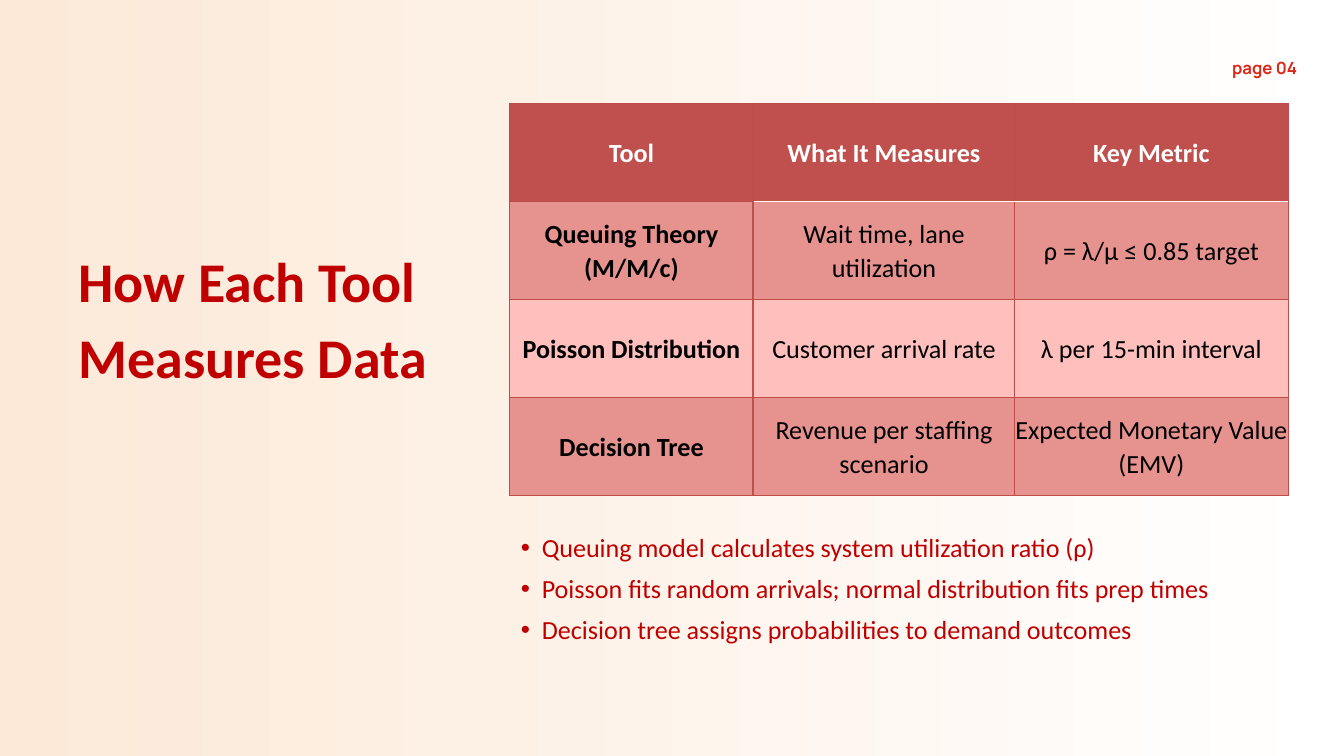
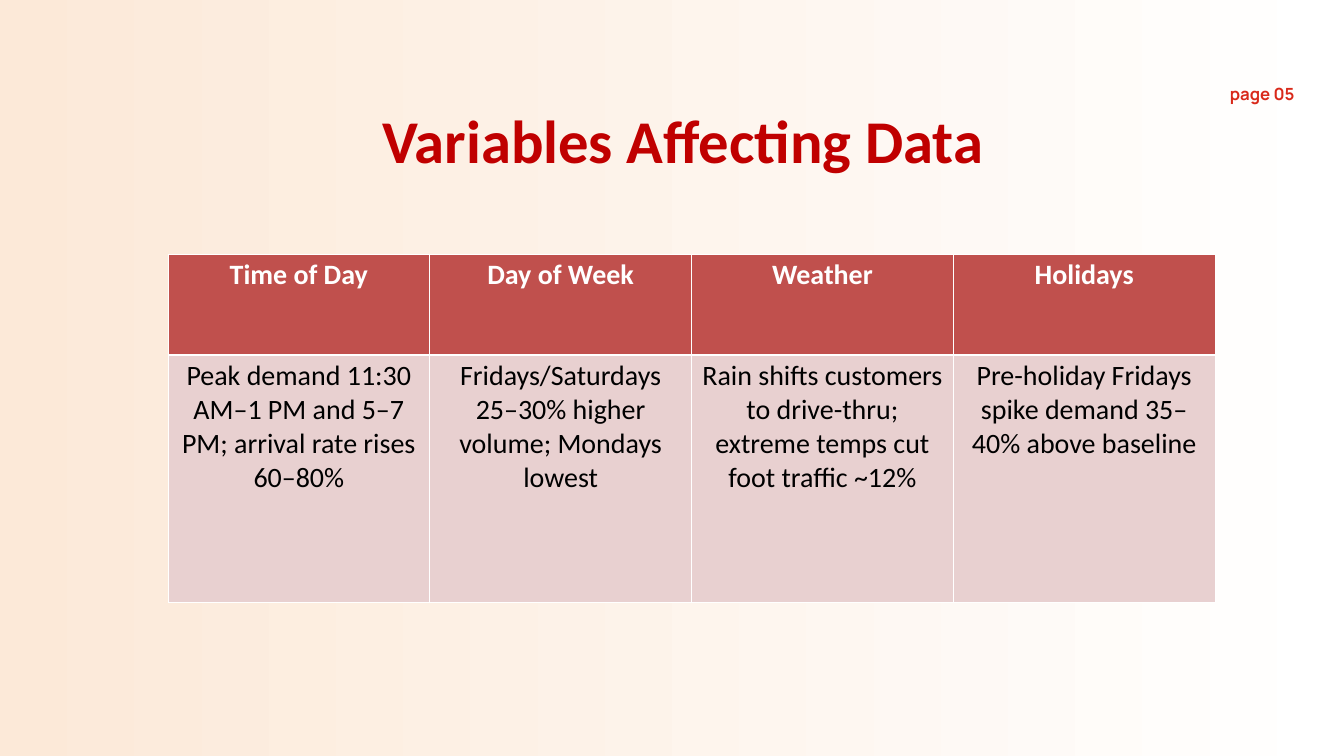
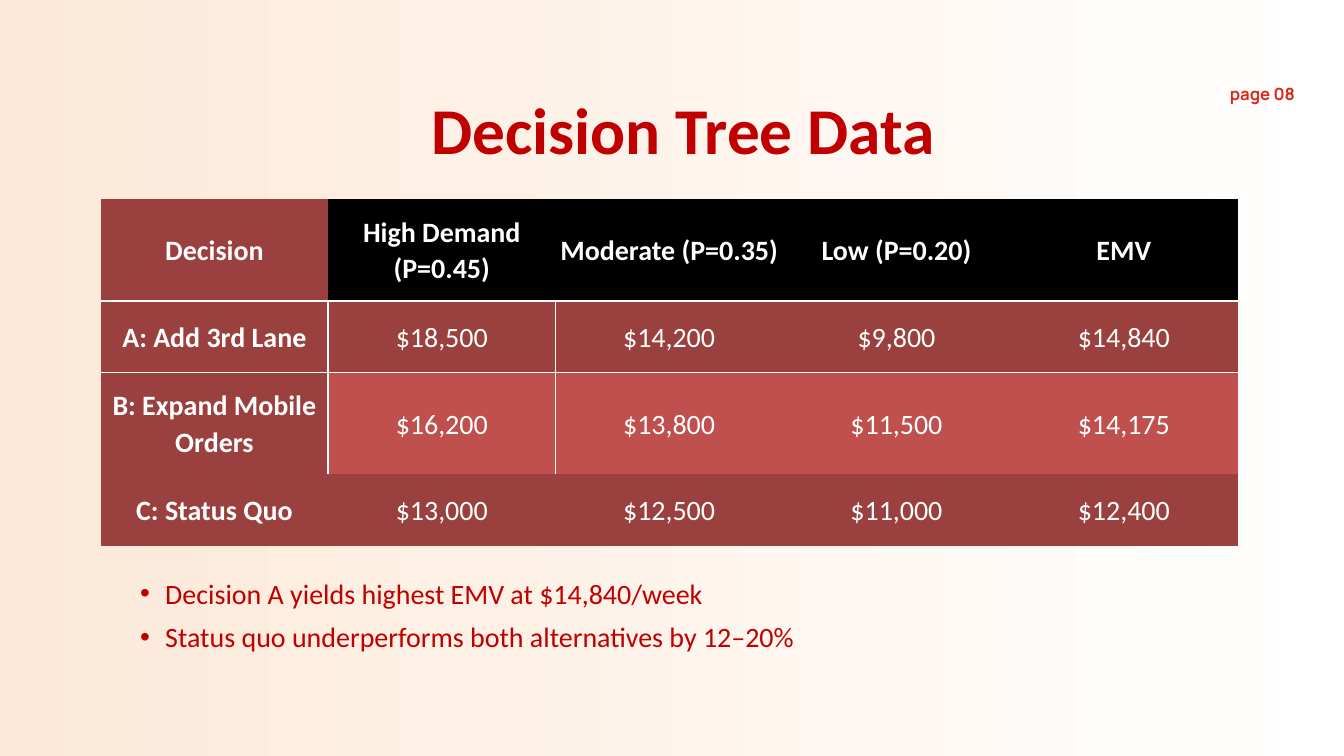
"""Build three slides on the tools, variables and decision data of a demand study."""
import pptx
import pptx.dml.color
import pptx.enum.text
import pptx.oxml
import pptx.oxml.ns
import pptx.util
from lxml import etree

RGB = pptx.dml.color.RGBColor
Pt = pptx.util.Pt
qn = pptx.oxml.ns.qn
ALIGN = pptx.enum.text.PP_ALIGN
ANCHOR = pptx.enum.text.MSO_ANCHOR

CREAM = RGB(0xFC, 0xE9, 0xD8)
WHITE = RGB(0xFF, 0xFF, 0xFF)
BLACK = RGB(0x00, 0x00, 0x00)
TITLE_RED = RGB(0xC0, 0x00, 0x00)
PAGE_RED = RGB(0xD9, 0x29, 0x1A)
BRICK = RGB(0xC0, 0x50, 0x4D)
BRICK_LINE = RGB(0xBF, 0x4C, 0x48)
DARK_BRICK = RGB(0x9A, 0x40, 0x3E)
ROSE = RGB(0xE6, 0x93, 0x90)
PINK = RGB(0xFF, 0xC0, 0xBD)
PALE_PINK = RGB(0xE8, 0xD0, 0xD0)

NO_STYLE = "{2D5ABB26-0587-4C30-8999-92F81FD0307C}"
SIDES = ["lnL", "lnR", "lnT", "lnB"]
TITLE_AND_BODY, TITLE_ONLY = 1, 5
LOOSE = {"spacing": 1.07, "after": 8}

prs = pptx.Presentation()
prs.slide_width = pptx.util.Inches(20)
prs.slide_height = pptx.util.Inches(11.25)
UNIT = prs.slide_width / 240

fill = prs.slide_master.background.fill
fill.gradient()
fill.gradient_angle = 0
for stop, color in zip(fill.gradient_stops, (CREAM, WHITE)):
    stop.color.rgb = color


def add_text(p, text, size, color, bold=False, font="Calibri", align=ALIGN.LEFT, spacing=1.0, after=0):
    """Format a paragraph and add one run to it."""
    p.alignment = align
    p.line_spacing = spacing
    p.space_before = Pt(0)
    p.space_after = Pt(after)
    r = p.add_run()
    r.text = text
    r.font.name = font
    r.font.size = Pt(size)
    r.font.bold = bold
    r.font.color.rgb = color


def set_border(cell, sides, color, width):
    """Draw the named sides of a table cell."""
    tc_pr = cell._tc.get_or_add_tcPr()
    for side in sides:
        for old in tc_pr.findall(qn("a:" + side)):
            tc_pr.remove(old)
        earlier = [qn("a:" + name) for name in SIDES[:SIDES.index(side)]]
        ln = etree.Element(qn("a:" + side), w=str(Pt(width)))
        solid = etree.SubElement(ln, qn("a:solidFill"))
        etree.SubElement(solid, qn("a:srgbClr"), val=str(color))
        tc_pr.insert(sum(child.tag in earlier for child in tc_pr), ln)


slides = [
    {
        "page": "page 04", "page_at": (220, 11.5),
        "title": "How Each Tool Measures Data", "title_box": (14, 42.5, 74.5, 26.5),
        "title_format": {"size": 60, "spacing": Pt(81)},
        "bullets": ["Queuing model calculates system utilization ratio (ρ)",
                    "Poisson fits random arrivals; normal distribution fits prep times",
                    "Decision tree assigns probabilities to demand outcomes"],
        "bullet_box": (93, 94.5, 132, 20.5), "indent": 3.75,
        "table_box": (91, 18.5, 139, 70), "cols": [43.5, 46.7, 48.8], "rows": [17.5] * 4,
        "size": 28, "tight": True, "bold_first": True, "ink": BLACK,
        "fills": [[BRICK] * 3, [ROSE] * 3, [PINK] * 3, [ROSE] * 3],
        "cells": [["Tool", "What It Measures", "Key Metric"],
                  ["Queuing Theory (M/M/c)", "Wait time, lane utilization", "ρ = λ/μ ≤ 0.85 target"],
                  ["Poisson Distribution", "Customer arrival rate", "λ per 15-min interval"],
                  ["Decision Tree", "Revenue per staffing scenario", "Expected Monetary Value (EMV)"]],
    },
    {
        "page": "page 05", "page_at": (219.6, 16),
        "title": "Variables Affecting Data", "title_box": (38, 17.5, 168, 13.5),
        "title_format": {"size": 65, "align": ALIGN.CENTER, **LOOSE},
        "bullets": [],
        "table_box": (30, 45.5, 187, 62), "cols": [187 / 4] * 4, "rows": [17.9, 44.1],
        "size": 30, "tight": False, "bold_first": False, "ink": BLACK,
        "fills": [[BRICK] * 4, [PALE_PINK] * 4],
        "cells": [["Time of Day", "Day of Week", "Weather", "Holidays"],
                  ["Peak demand 11:30 AM–1 PM and 5–7 PM; arrival rate rises 60–80%",
                   "Fridays/Saturdays 25–30% higher volume; Mondays lowest",
                   "Rain shifts customers to drive-thru; extreme temps cut foot traffic ~12%",
                   "Pre-holiday Fridays spike demand 35–40% above baseline"]],
    },
    {
        "page": "page 08", "page_at": (219.6, 16),
        "title": "Decision Tree Data", "title_box": (39, 16.5, 166, 13.7),
        "title_format": {"size": 70, "align": ALIGN.CENTER, "spacing": Pt(81)},
        "bullets": ["Decision A yields highest EMV at $14,840/week",
                    "Status quo underperforms both alternatives by 12–20%"],
        "bullet_box": (25, 102.5, 162, 14), "indent": 4.5,
        "table_box": (18, 35.5, 203, 62), "cols": [203 / 5] * 5, "rows": [18.2, 12.8] * 2,
        "size": 30, "tight": True, "bold_first": True, "ink": WHITE,
        "fills": [[DARK_BRICK] + [BLACK] * 4, [DARK_BRICK] * 5,
                  [DARK_BRICK] + [BRICK] * 4, [DARK_BRICK] * 5],
        "cells": [["Decision", "High Demand (P=0.45)", "Moderate (P=0.35)", "Low (P=0.20)", "EMV"],
                  ["A: Add 3rd Lane", "$18,500", "$14,200", "$9,800", "$14,840"],
                  ["B: Expand Mobile Orders", "$16,200", "$13,800", "$11,500", "$14,175"],
                  ["C: Status Quo", "$13,000", "$12,500", "$11,000", "$12,400"]],
    },
]

tables = []
for d in slides:
    s = prs.slides.add_slide(prs.slide_layouts[TITLE_AND_BODY if d["bullets"] else TITLE_ONLY])
    page = s.shapes.add_textbox(0, 0, 0, 0)
    frames = [(page, (*d["page_at"], 13.8, 2.8)), (s.shapes.title, d["title_box"])]
    if d["bullets"]:
        frames.append((s.placeholders[1], d["bullet_box"]))
    for sp, box in frames:
        sp.left, sp.top, sp.width, sp.height = [round(n * UNIT) for n in box]
        tf = sp.text_frame
        tf.margin_left = tf.margin_top = tf.margin_right = tf.margin_bottom = 0
        tf.word_wrap = True
        tf.auto_size = pptx.enum.text.MSO_AUTO_SIZE.NONE
        tf.vertical_anchor = ANCHOR.TOP
    add_text(page.text_frame.paragraphs[0], d["page"], 18, PAGE_RED, True, "Manrope", spacing=Pt(14.9))
    add_text(s.shapes.title.text_frame.paragraphs[0], d["title"], color=TITLE_RED, bold=True,
             **d["title_format"])

    for i, text in enumerate(d["bullets"]):
        tf = s.placeholders[1].text_frame
        p = tf.add_paragraph() if i else tf.paragraphs[0]
        p_pr = p._p.get_or_add_pPr()
        indent = round(d["indent"] * UNIT)
        p_pr.set("marL", str(indent))
        p_pr.set("indent", str(-indent))
        etree.SubElement(p_pr, qn("a:buFont"), typeface="Arial")
        etree.SubElement(p_pr, qn("a:buChar"), char="•")
        tabs = etree.SubElement(p_pr, qn("a:tabLst"))
        etree.SubElement(tabs, qn("a:tab"), pos=str(round(6 * UNIT)), algn="l")
        add_text(p, text, d["size"], TITLE_RED, **LOOSE)

    box = [round(n * UNIT) for n in d["table_box"]]
    table = s.shapes.add_table(len(d["rows"]), len(d["cols"]), *box).table
    table._tbl.tblPr.find(qn("a:tableStyleId")).text = NO_STYLE
    table.horz_banding = False
    for column, width in zip(table.columns, d["cols"]):
        column.width = round(width * UNIT)
    for i, height in enumerate(d["rows"]):
        table.rows[i].height = round(height * UNIT)
        for j, text in enumerate(d["cells"][i]):
            cell = table.cell(i, j)
            cell.fill.solid()
            cell.fill.fore_color.rgb = d["fills"][i][j]
            if d["tight"]:
                cell.margin_left = cell.margin_top = cell.margin_right = cell.margin_bottom = Pt(0.75)
                cell.vertical_anchor = ANCHOR.MIDDLE
            add_text(cell.text_frame.paragraphs[0], text, d["size"], d["ink"] if i else WHITE,
                     i == 0 or (j == 0 and d["bold_first"]), align=ALIGN.CENTER,
                     **(LOOSE if d["tight"] else {}))
    tables.append(table)

tools, variables, decisions = tables
for cell in tools.iter_cells():
    set_border(cell, SIDES, BRICK_LINE, 0.75)
for i in range(1, 4):
    set_border(tools.cell(i, 0), ["lnR"], BRICK, 2)
    set_border(tools.cell(i, 1), ["lnL"], BRICK, 2)
for j in range(1, 3):
    set_border(tools.cell(0, j), ["lnB"], WHITE, 1)
    set_border(tools.cell(1, j), ["lnT"], WHITE, 1)

for cell in variables.iter_cells():
    set_border(cell, SIDES, WHITE, 1)
for j in range(4):
    set_border(variables.cell(0, j), ["lnB"], WHITE, 3)
    set_border(variables.cell(1, j), ["lnT"], WHITE, 3)

for j in range(5):
    set_border(decisions.cell(0, j), ["lnB"], WHITE, 2)
    set_border(decisions.cell(1, j), ["lnT"], WHITE, 2)
for i in range(1, 3):
    set_border(decisions.cell(i, 0), ["lnR"], WHITE, 2)
    set_border(decisions.cell(i, 1), ["lnL"], WHITE, 2)

prs.save("out.pptx")
